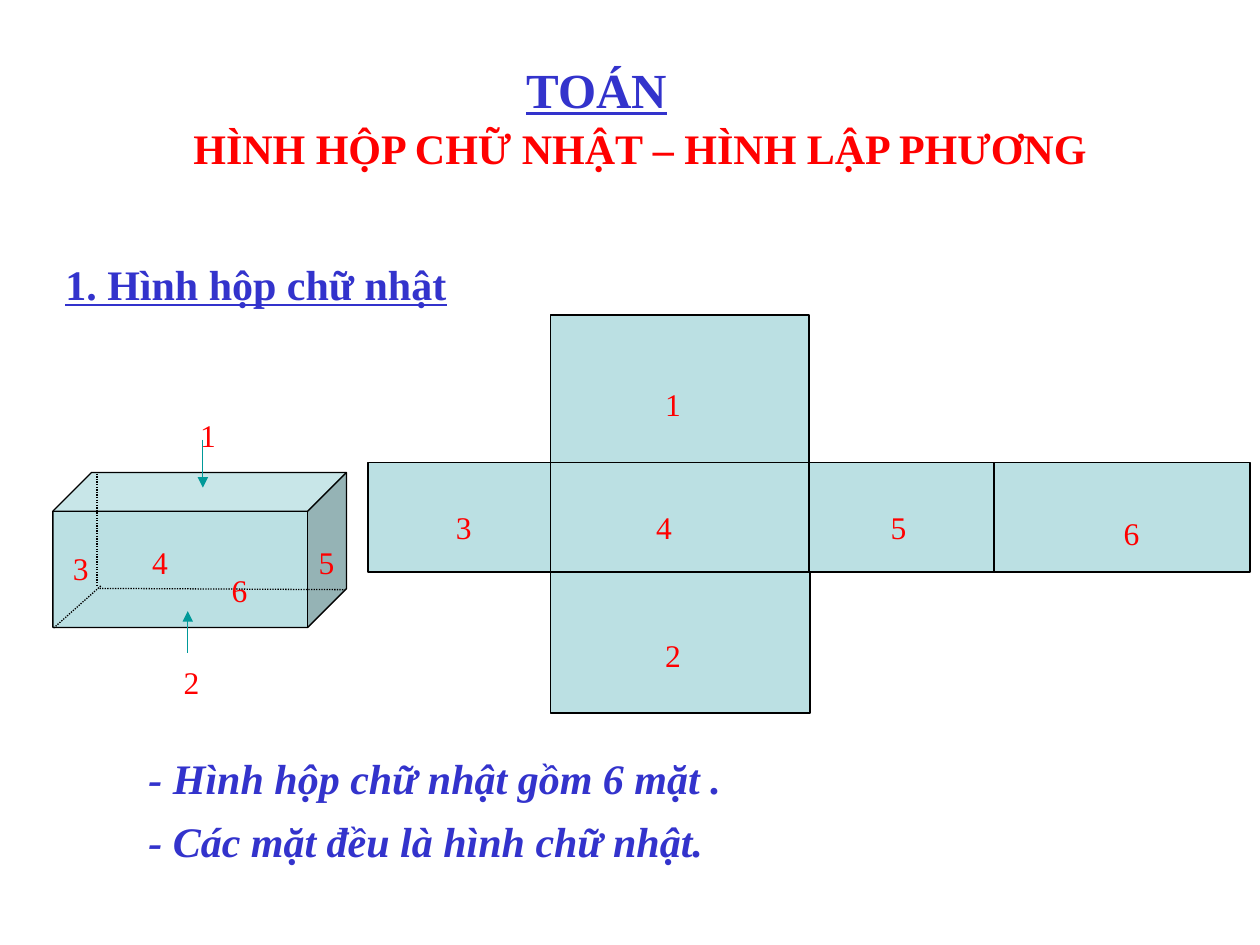
from dataclasses import dataclass

from lxml import etree
from pptx import Presentation
from pptx.dml.color import RGBColor
from pptx.enum import dml, shapes, text
from pptx.oxml import ns
from pptx.util import Inches, Pt


@dataclass(frozen=True)
class Theme:
    font: str = "Times New Roman"
    blue: RGBColor = RGBColor(0x33, 0x33, 0xCC)
    red: RGBColor = RGBColor(0xFF, 0, 0)
    teal: RGBColor = RGBColor(0, 0x99, 0x99)
    face: RGBColor = RGBColor(0xBB, 0xE0, 0xE3)
    black: RGBColor = RGBColor(0, 0, 0)
    subject: Pt = Pt(28)
    heading: Pt = Pt(24)
    label: Pt = Pt(18)
    line: Pt = Pt(0.75)


theme = Theme()


def write(shape, words, size, color, bold=False, italic=False, underline=False):
    frame = shape.text_frame
    frame.text = words
    frame.word_wrap = True
    frame.auto_size = text.MSO_AUTO_SIZE.SHAPE_TO_FIT_TEXT
    frame.vertical_anchor = text.MSO_ANCHOR.TOP
    font = frame.paragraphs[0].runs[0].font
    font.name, font.size, font.color.rgb = theme.font, size, color
    font.bold, font.italic, font.underline = bold, italic, underline


def add_line(group, start, end, color):
    line = group.shapes.add_connector(
        shapes.MSO_CONNECTOR.STRAIGHT, *map(Inches, start + end))
    line.line.color.rgb = color
    line.line.width = theme.line
    etree.SubElement(line._element.spPr, ns.qn("a:effectLst"))
    return line


presentation = Presentation()
presentation.slide_width = Inches(10)
presentation.slide_height = Inches(7.5)
slide = presentation.slides.add_slide(presentation.slide_layouts[5])

title = slide.shapes.title
title.left, title.top = Inches(1.33), Inches(0.92)
title.width, title.height = Inches(7.5), Inches(0.51)
write(title, "HÌNH HỘP CHỮ NHẬT – HÌNH LẬP PHƯƠNG", theme.heading, theme.red, bold=True)
title.text_frame.paragraphs[0].alignment = text.PP_ALIGN.CENTER

net = slide.shapes.add_group_shape()
box = slide.shapes.add_group_shape()

solids = [
    (net, shapes.MSO_SHAPE.RECTANGLE, 2.92, 3.67, 1.47, 0.87),
    (net, shapes.MSO_SHAPE.RECTANGLE, 4.37, 3.67, 2.05, 0.87),
    (net, shapes.MSO_SHAPE.RECTANGLE, 4.37, 4.54, 2.06, 1.12),
    (net, shapes.MSO_SHAPE.RECTANGLE, 7.87, 3.67, 2.05, 0.87),
    (net, shapes.MSO_SHAPE.RECTANGLE, 4.37, 2.5, 2.05, 1.17),
    (net, shapes.MSO_SHAPE.RECTANGLE, 6.42, 3.67, 1.47, 0.87),
    (box, shapes.MSO_SHAPE.CUBE, 0.42, 3.75, 2.33, 1.23),
]
for group, kind, *place in solids:
    solid = group.shapes.add_shape(kind, *map(Inches, place))
    solid.shadow.inherit = False
    solid.fill.solid()
    solid.fill.fore_color.rgb = theme.face
    solid.line.color.rgb = theme.black
    solid.line.width = theme.line

hidden_edges = [
    ((0.77, 3.76), (0.77, 4.66)),
    ((0.79, 4.67), (2.74, 4.68)),
    ((0.8, 4.65), (0.42, 4.99)),
]
for start, end in hidden_edges:
    edge = add_line(box, start, end, theme.black)
    edge.line.dash_style = dml.MSO_LINE.ROUND_DOT

face_numbers = [
    (net, 0.4, [("3", 3.52, 3.98), ("6", 8.82, 4.03), ("4", 5.11, 3.98),
                ("5", 6.97, 3.98), ("1", 5.18, 3.01), ("2", 5.18, 5)]),
    (box, 0.32, [("3", 0.48, 4.31), ("6", 1.74, 4.48), ("4", 1.11, 4.26),
                 ("5", 2.43, 4.26), ("1", 1.49, 3.25), ("2", 1.36, 5.21)]),
]
for group, width, numbers in face_numbers:
    for number, left, top in numbers:
        label = group.shapes.add_textbox(*map(Inches, (left, top, width, 0.4)))
        write(label, number, theme.label, theme.red)

for start, end in [((1.49, 5.18), (1.49, 4.85)), ((1.61, 3.49), (1.61, 3.87))]:
    arrow = add_line(box, start, end, theme.teal)
    etree.SubElement(arrow.line._get_or_add_ln(), ns.qn("a:tailEnd"), type="triangle")

statements = [
    ("TOÁN", 4.08, 0.42, 1.67, 0.57, theme.subject, False),
    ("1. Hình hộp chữ nhật", 0.42, 2, 4.75, 0.51, theme.heading, False),
    ("- Hình hộp chữ nhật gồm 6 mặt .", 1.08, 5.92, 6.58, 0.51, theme.heading, True),
    ("- Các mặt đều là hình chữ nhật.", 1.08, 6.42, 5.33, 0.51, theme.heading, True),
]
for words, left, top, width, height, size, italic in statements:
    statement = slide.shapes.add_textbox(*map(Inches, (left, top, width, height)))
    write(statement, words, size, theme.blue, bold=True, italic=italic, underline=not italic)

presentation.save("out.pptx")
